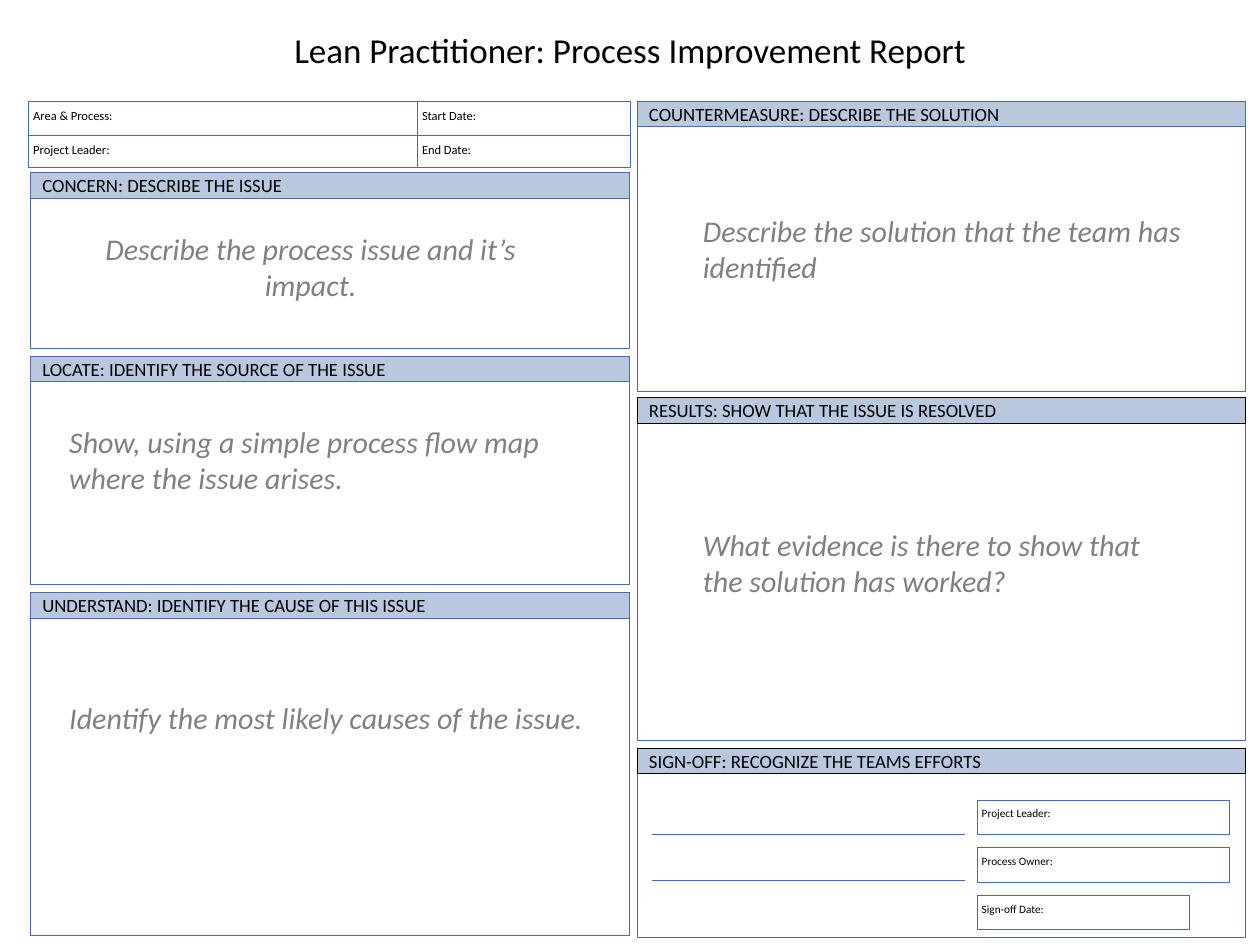
import pptx
import pptx.dml.color
import pptx.enum.shapes
import pptx.enum.text
import pptx.oxml.ns
import pptx.util
from lxml import etree

Pt = pptx.util.Pt
RGB = pptx.dml.color.RGBColor
Align = pptx.enum.text.PP_ALIGN
Anchor = pptx.enum.text.MSO_ANCHOR
qn = pptx.oxml.ns.qn

BLUE = RGB(0x49, 0x6C, 0xA9)
BAND = RGB(0x76, 0x92, 0xC1)
BLACK = RGB(0, 0, 0)
GREY = RGB(0x80, 0x80, 0x80)
WHITE = RGB(0xFF, 0xFF, 0xFF)


def write(shape, text, size=15, color=BLACK, italic=False, align=Align.LEFT,
          anchor=Anchor.TOP, inset=(7.2, 3.6), grow=False):
    frame = shape.text_frame
    frame.word_wrap = True
    fit = pptx.enum.text.MSO_AUTO_SIZE
    frame.auto_size = fit.SHAPE_TO_FIT_TEXT if grow else fit.NONE
    frame.vertical_anchor = anchor
    frame.margin_left = frame.margin_right = Pt(inset[0])
    frame.margin_top = frame.margin_bottom = Pt(inset[1])
    para = frame.paragraphs[0]
    para.alignment = align
    run = para.add_run()
    run.text = text
    font = run.font
    font.name, font.size, font.italic = "Calibri", Pt(size), italic
    font.color.rgb = color


class Form:
    """Style and current slide of the report form."""
    thin = 0.75
    bar = 20.2

    def __init__(self, slide):
        self.shapes = slide.shapes

    def box(self, x, y, w, h, fill=None, line=BLUE):
        kind = pptx.enum.shapes.MSO_SHAPE.RECTANGLE
        shape = self.shapes.add_shape(kind, Pt(x), Pt(y), Pt(w), Pt(h))
        shape.shadow.inherit = False
        if fill is None:
            shape.fill.background()
        else:
            shape.fill.solid()
            shape.fill.fore_color.rgb = fill
        shape.line.color.rgb = line
        shape.line.width = Pt(self.thin)
        return shape

    def panel(self, x, y, w, h, head, line=BLUE):
        self.box(x, y, w, h)
        band = self.box(x, y, w, self.bar, BAND, line)
        tint = band.fill._xPr.find(".//" + qn("a:srgbClr"))
        etree.SubElement(tint, qn("a:alpha"), val="50000")
        write(band, head, anchor=Anchor.MIDDLE, inset=(9.4, 5))

    def field(self, x, y, w, h, label, size, fill=None):
        write(self.box(x, y, w, h, fill), label, size=size, inset=(3.6, 5))

    def note(self, x, y, w, h, text, **style):
        area = self.shapes.add_textbox(Pt(x), Pt(y), Pt(w), Pt(h))
        write(area, text, grow=True, **style)

    def rule(self, left, right, y):
        kind = pptx.enum.shapes.MSO_CONNECTOR.STRAIGHT
        line = self.shapes.add_connector(kind, Pt(right), Pt(y), Pt(left), Pt(y))
        line.line.color.rgb = BLUE
        line.line.width = Pt(1)
        etree.SubElement(line._element.spPr, qn("a:effectLst"))


def main():
    deck = pptx.Presentation()
    deck.slide_width, deck.slide_height = Pt(1008), Pt(756)
    form = Form(deck.slides.add_slide(deck.slide_layouts[6]))

    # Title
    form.note(0, 19.4, 1008, 41, "Lean Practitioner: Process Improvement Report",
              size=28, align=Align.CENTER)

    # Project details
    cols = [(23, 311, ("Area & Process:", "Project Leader:")),
            (334, 170, ("Start Date:", "End Date:"))]
    rows = [(81.2, 27.4), (108.6, 25.2)]
    for x, w, labels in cols:
        for (y, h), label in zip(rows, labels):
            form.field(x, y, w, h, label, 10)

    # Titled panels
    left, right = (24.5, 479.5), (509.8, 486.6)
    panels = [
        (left, 138.2, 140.4, "CONCERN: DESCRIBE THE ISSUE", BLUE),
        (left, 285.1, 182.9, "LOCATE: IDENTIFY THE SOURCE OF THE ISSUE", BLUE),
        (left, 474.3, 274.3, "UNDERSTAND: IDENTIFY THE CAUSE OF THIS ISSUE", BLUE),
        (right, 81.2, 231.8, "COUNTERMEASURE: DESCRIBE THE SOLUTION", BLUE),
        (right, 318.2, 274.3, "RESULTS: SHOW THAT THE ISSUE IS RESOLVED", BLACK),
        (right, 598.5, 151.2, "SIGN-OFF: RECOGNIZE THE TEAMS EFFORTS", BLACK),
    ]
    for (x, w), y, h, head, line in panels:
        form.panel(x, y, w, h, head, line)

    # Prompts inside the panels
    prompts = [
        (47.5, 180.7, 402, "Describe the process issue and it’s impact.", Align.CENTER),
        (47.5, 334.8, 402,
         "Show, using a simple process flow map where the issue arises.", Align.LEFT),
        (47.5, 541.4, 432, "Identify the most likely causes of the issue.", Align.LEFT),
        (554.4, 166.3, 402,
         "Describe the solution that the team has identified", Align.LEFT),
        (554.4, 416.9, 402,
         "What evidence is there to show that the solution has worked?", Align.LEFT),
    ]
    for x, y, w, text, align in prompts:
        form.note(x, y, w, 65.5, text, size=24, color=GREY, italic=True,
                  align=align, anchor=Anchor.MIDDLE, inset=(7.9, 3.6))

    # Sign-off fields and signature lines
    signs = [("Project Leader:", 202, None), ("Process Owner:", 202, WHITE),
             ("Sign-off Date:", 170, WHITE)]
    for i, (label, w, fill) in enumerate(signs):
        form.field(781.8, 640 + i * 38.2, w, 27.4, label, 9, fill)
    for y in (667.4, 704.2):
        form.rule(521.3, 771.8, y)

    deck.save("out.pptx")


if __name__ == "__main__":
    main()
